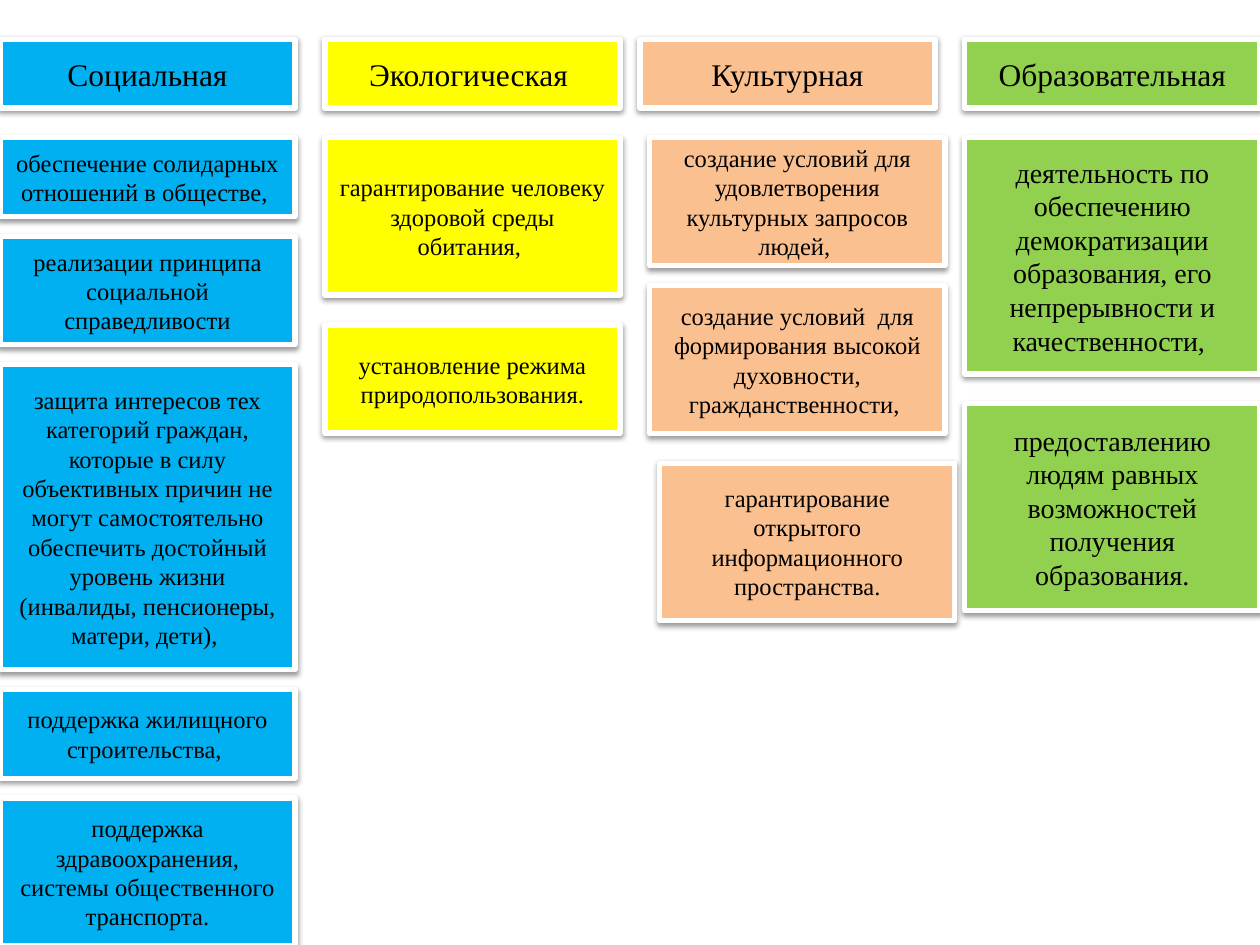
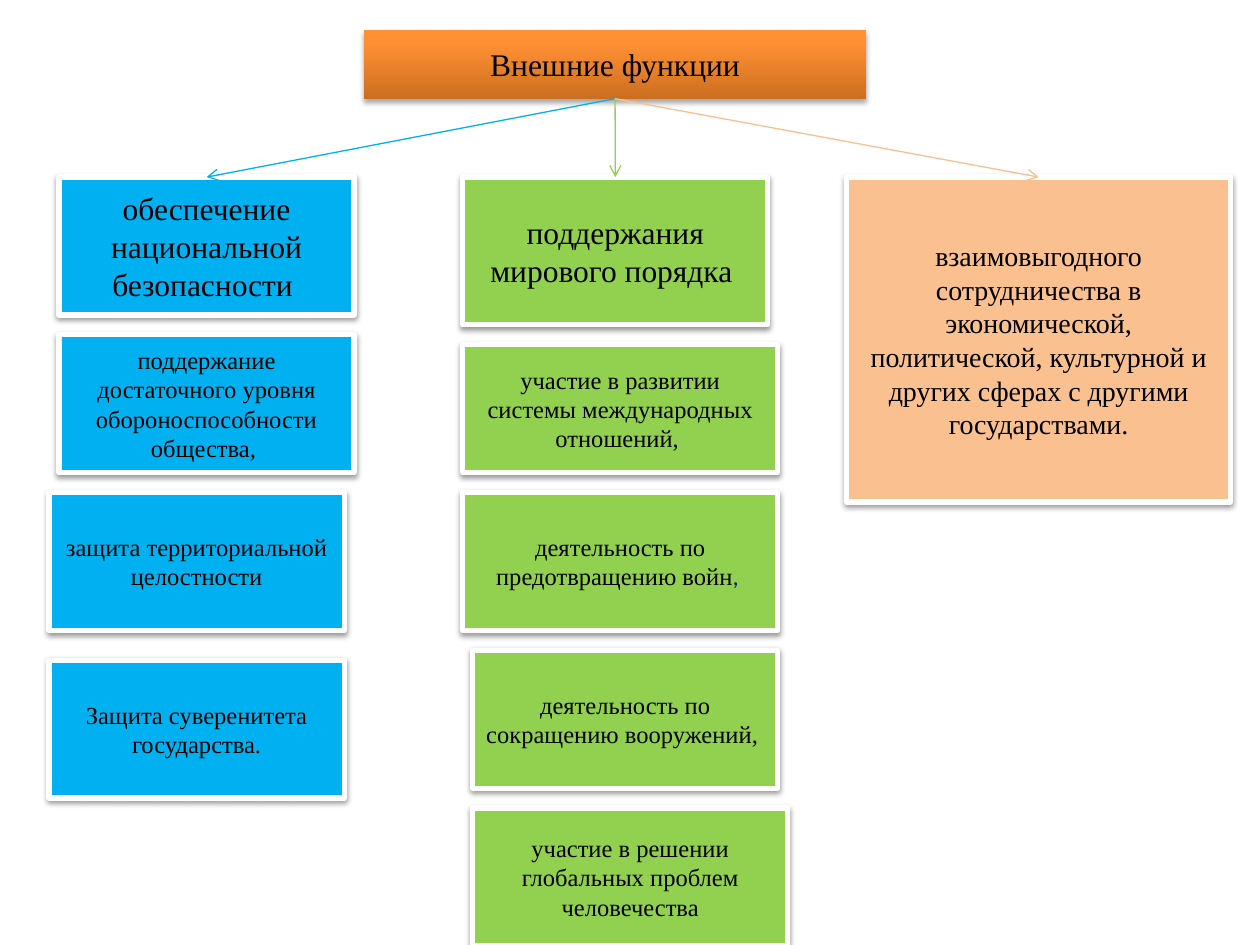
from lxml import etree
from pptx import Presentation
from pptx.dml.color import RGBColor
from pptx.enum.shapes import MSO_CONNECTOR, MSO_SHAPE
from pptx.enum.text import MSO_ANCHOR, PP_ALIGN
from pptx.oxml.ns import qn
from pptx.util import Cm, Pt

RECT = MSO_SHAPE.RECTANGLE
LINE = MSO_CONNECTOR.STRAIGHT
MIDDLE = MSO_ANCHOR.MIDDLE
CENTER = PP_ALIGN.CENTER
BOTTOM, TOP = 2, 0

HUES = {
    "blue": "00B0F0", "yellow": "FFFF00", "peach": "FAC090", "green": "92D050",
    "white": "FFFFFF", "black": "000000", "navy": "002060",
    "dark": "CC6E20", "mid": "FF9034", "light": "FF9136",
}
FONT = "Times New Roman"
WIDE = 5.95   # usual box width, cm
GAP = 0.4     # usual gap between stacked boxes, cm
BIG_GAP = 0.6
STEP = 0.2    # sideways shift of a box, cm
HEAD = 1.39   # height of a heading, cm


def rgb(hue):
    return RGBColor.from_string(HUES[hue])


def sub(root, tag, **attrs):
    return etree.SubElement(root, qn(tag), **attrs)


class Deck:
    def __init__(self):
        self.prs = Presentation()
        self.prs.slide_width = Cm(25.4)
        self.prs.slide_height = Cm(19.05)
        self.slide = None

    def page(self):
        self.slide = self.prs.slides.add_slide(self.prs.slide_layouts[6])

    def shade(self, shape, alpha, dist):
        """Give the shape a soft shadow that falls straight down."""
        shape.shadow.inherit = False
        root = shape._element.spPr.find(qn("a:effectLst"))
        cast = sub(root, "a:outerShdw", blurRad=str(Pt(3.1)), dist=str(Pt(dist)),
                   dir="5400000", rotWithShape="0")
        tint = sub(cast, "a:srgbClr", val=HUES["black"])
        sub(tint, "a:alpha", val=str(alpha * 1000))

    def style(self, run, size, font=FONT, hue="black"):
        run.font.size = Pt(size)
        run.font.name = font
        run.font.color.rgb = rgb(hue)

    def block(self, text, left, top, wide, high, size):
        shape = self.slide.shapes.add_shape(RECT, Cm(left), Cm(top), Cm(wide), Cm(high))
        frame = shape.text_frame
        frame.word_wrap = True
        frame.vertical_anchor = MIDDLE
        frame.text = text
        par = frame.paragraphs[0]
        par.alignment = CENTER
        self.style(par.runs[0], size)
        return shape

    def box(self, text, hue, left, top, high, wide=WIDE, size=14, tail=""):
        """Draw a white-framed box; tail is ending text in the second font."""
        shape = self.block(text, left, top, wide, high, size)
        shape.fill.solid()
        shape.fill.fore_color.rgb = rgb(hue)
        shape.line.color.rgb = rgb("white")
        shape.line.width = Pt(3)
        self.shade(shape, 38, 1.6)
        if tail:
            run = shape.text_frame.paragraphs[0].add_run()
            run.text = tail
            self.style(run, size, "Calibri", "navy")
        return shape

    def title(self, text, left, top, wide):
        shape = self.block(text, left, top, wide, HEAD, 18)
        shape.fill.gradient()
        shape.fill.gradient_angle = 90
        stops = shape._element.spPr.find(qn("a:gradFill")).find(qn("a:gsLst"))
        for old in list(stops):
            stops.remove(old)
        for pos, hue in ((0, "dark"), (80, "mid"), (100, "light")):
            stop = sub(stops, "a:gs", pos=str(pos * 1000))
            sub(stop, "a:srgbClr", val=HUES[hue])
        shape.line.fill.background()
        self.shade(shape, 35, 1.8)
        return shape

    def stack(self, hue, left, top, cards):
        """Pile (text, height, options) cards downwards; return the first box."""
        boxes = []
        for text, high, opts in cards:
            opts = dict(opts)
            gap = opts.pop("gap", GAP)
            shift = opts.pop("shift", 0)
            boxes.append(self.box(text, hue, left + shift, top, high, **opts))
            top += high + gap
        return boxes[0]

    def arrow(self, start, end, hue):
        """Join the bottom of start to the top of end."""
        line = self.slide.shapes.add_connector(LINE, 0, 0, 0, 0)
        line.begin_connect(start, BOTTOM)
        line.end_connect(end, TOP)
        line.line.color.rgb = rgb(hue)
        line.line.width = Pt(0.75)
        sub(line.line._get_or_add_ln(), "a:tailEnd", type="arrow")
        sub(line._element.spPr, "a:effectLst")


# heading, colour, heading left, cards left, cards
INNER = [
    ("Социальная", "blue", 0, 0, [
        ("обеспечение солидарных отношений в обществе, ", 1.59, {}),
        ("реализации принципа социальной справедливости", 2.18, {}),
        ("защита интересов тех категорий граждан, которые в силу объективных "
         "причин не могут самостоятельно обеспечить достойный уровень жизни "
         "(инвалиды, пенсионеры, матери, дети), ", 6.15, {}),
        ("поддержка жилищного строительства, ", 1.79, {}),
        ("поддержка здравоохранения, системы общественного транспорта.", 2.98, {}),
    ]),
    ("Экологическая ", "yellow", 6.55, 6.55, [
        ("гарантирование человеку здоровой среды обитания, ", 3.17, {"gap": BIG_GAP}),
        ("установление режима природопользования.", 2.18, {}),
    ]),
    ("Культурная", "peach", 12.9, 13.1, [
        ("создание условий для удовлетворения культурных запросов людей, ", 2.58, {}),
        ("создание условий  для формирования высокой духовности, "
         "гражданственности, ", 2.98, {"gap": BIG_GAP}),
        ("гарантирование открытого информационного пространства.", 3.17,
         {"shift": STEP}),
    ]),
    ("Образовательная", "green", 19.45, 19.45, [
        ("деятельность по обеспечению демократизации образования, его "
         "непрерывности и качественности, ", 4.76, {"size": 16, "gap": BIG_GAP}),
        ("предоставлению людям равных возможностей получения образования.", 4.17,
         {"size": 16}),
    ]),
]

# colour, left, cards
OUTER = [
    ("blue", 1.19, [
        ("обеспечение национальной безопасности ", 2.78, {"size": 18}),
        ("поддержание достаточного уровня обороноспособности общества, ", 2.78, {}),
        ("защита территориальной целостности", 2.78,
         {"shift": -STEP, "gap": BIG_GAP}),
        ("Защита суверенитета государства.", 2.78, {"shift": -STEP}),
    ]),
    ("green", 9.33, [
        ("поддержания мирового порядка ", 2.98, {"size": 18, "wide": 6.15}),
        ("участие в развитии системы международных отношений, ", 2.58,
         {"wide": 6.35}),
        ("деятельность по предотвращению войн", 2.78, {"wide": 6.35, "tail": ", "}),
        ("деятельность по сокращению вооружений, ", 2.78,
         {"wide": 6.15, "shift": STEP}),
        ("участие в решении глобальных проблем человечества", 2.78,
         {"wide": 6.35, "shift": STEP}),
    ]),
    ("peach", 17.07, [
        ("взаимовыгодного сотрудничества в экономической, политической, "
         "культурной и других сферах с другими государствами.", 6.55,
         {"size": 16, "wide": 7.74}),
    ]),
]


def main():
    deck = Deck()

    deck.page()
    for head, hue, left, inset, cards in INNER:
        deck.box(head, hue, left, 0.79, HEAD, size=18)
        deck.stack(hue, inset, 2.78, cards)

    deck.page()
    title = deck.title("Внешние функции", 7.34, 0.6, 10.12)
    for hue, left, cards in OUTER:
        first = deck.stack(hue, left, 3.57, cards)
        deck.arrow(title, first, hue)

    deck.prs.save("out.pptx")


if __name__ == "__main__":
    main()
